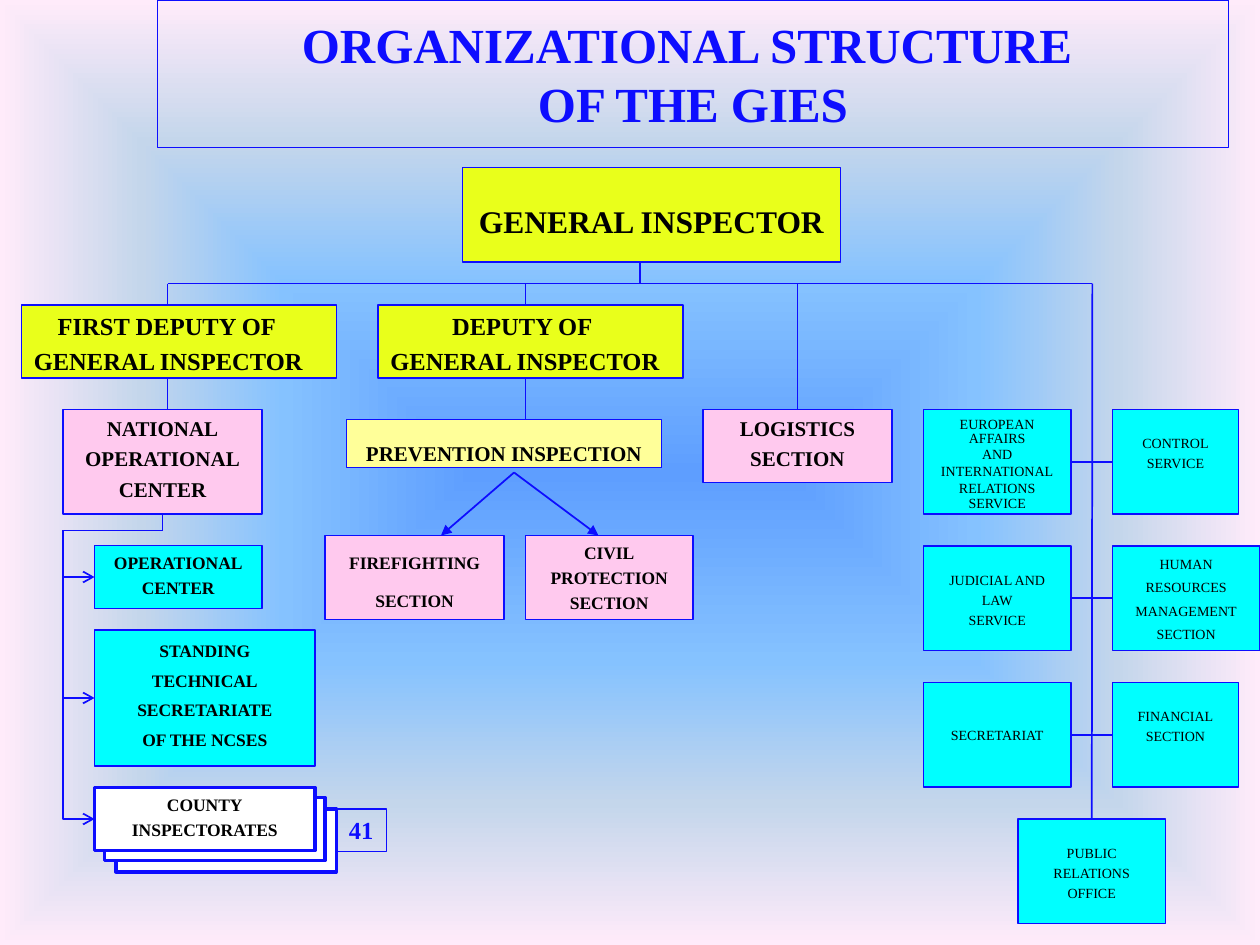
from itertools import cycle

from lxml.etree import SubElement
from pptx import Presentation
from pptx.dml.color import RGBColor
from pptx.enum.shapes import MSO_CONNECTOR, MSO_SHAPE
from pptx.enum.text import MSO_ANCHOR, PP_ALIGN
from pptx.oxml import parse_xml
from pptx.oxml.ns import nsdecls, qn
from pptx.util import Inches, Pt

FONT = "Times New Roman"
BLUE, BLACK, WHITE = "0D0DFF", "000000", "FFFFFF"
LIME, PINK, CYAN, CREAM = "E9FF1B", "FFC9EE", "00FFFF", "FFFF99"
BACKGROUND_STOPS = [(0, "5E9EFF"), (40, "85C2FF"), (70, "C4D6EB"), (100, "FFEBFA")]
BLANK_LINE = 0.15  # height of one small line, used to lower text in a box


def rgb(color):
    return RGBColor.from_string(color)


def paint_background(page):
    stops = "".join(
        f'<a:gs pos="{percent * 1000}"><a:srgbClr val="{color}"/></a:gs>'
        for percent, color in BACKGROUND_STOPS)
    page.element.cSld.insert(0, parse_xml(
        f'<p:bg {nsdecls("p", "a")}><p:bgPr><a:gradFill><a:gsLst>{stops}</a:gsLst>'
        '<a:path path="shape"><a:fillToRect l="50000" t="50000" r="50000" b="50000"/>'
        '</a:path></a:gradFill><a:effectLst/></p:bgPr></p:bg>'))


def outline(shape, width):
    shape.line.color.rgb = rgb(BLUE)
    shape.line.width = Pt(width)


def style_font(font, size, color, bold):
    font.name = FONT
    font.size = Pt(size)
    font.bold = bold
    font.color.rgb = rgb(color)


def add_title(page, text):
    title = page.shapes.title
    title.left, title.top, title.width, title.height = map(Inches, (1.25, 0, 8.5, 1.17))
    outline(title, 0.75)
    frame = title.text_frame
    frame.text = text
    frame.word_wrap = True
    frame.vertical_anchor = MSO_ANCHOR.MIDDLE
    paragraph = frame.paragraphs[0]
    paragraph.alignment = PP_ALIGN.CENTER
    for span in paragraph.runs:
        style_font(span.font, 28, BLUE, True)


def add_box(page, at, fill, lines=(), size=10, bold=True, color=BLACK, width=0.75,
            spacing=(1,), drop=0, align=PP_ALIGN.CENTER, first_indent=0):
    """Add a bordered box; spacing holds one factor per line and is repeated as needed."""
    box = page.shapes.add_shape(MSO_SHAPE.RECTANGLE, *map(Inches, at))
    box.shadow.inherit = False
    outline(box, width)
    if fill:
        box.fill.solid()
        box.fill.fore_color.rgb = rgb(fill)
    else:
        box.fill.background()
    if not lines:
        return box

    frame = box.text_frame
    frame.text = "\n".join(lines)
    frame.word_wrap = True
    frame.vertical_anchor = MSO_ANCHOR.TOP
    frame.margin_top = Inches(0.05 + drop)
    for index, (paragraph, factor) in enumerate(zip(frame.paragraphs, cycle(spacing))):
        paragraph.alignment = align
        paragraph.line_spacing = factor
        if index:
            paragraph.space_before = Pt(0.24 * size)
        elif first_indent:
            paragraph._p.get_or_add_pPr().set("indent", str(Inches(first_indent)))
        for span in paragraph.runs:
            style_font(span.font, size, color, bold)
    return box


def finish_line(line, arrow):
    outline(line, 1)
    if arrow:
        SubElement(line.get_or_add_ln(), qn("a:tailEnd"), type=arrow)
    SubElement(line._element.spPr, qn("a:effectLst"))


def add_line(page, start, end, arrow=None, begin=None, finish=None):
    """Add a straight line; begin and finish are (box, side) pairs to join."""
    line = page.shapes.add_connector(
        MSO_CONNECTOR.STRAIGHT, *map(Inches, (*start, *end)))
    if begin:
        line.begin_connect(*begin)
    if finish:
        line.end_connect(*finish)
    finish_line(line, arrow)


def add_elbow(page, start, end, turn_y, rail_x):
    """Run down to turn_y, left to rail_x, down again, and right into end."""
    (x1, y1), (x2, y2) = start, end
    across, down = x1 - x2, y2 - y1
    left = (x1 + x2 - down) / 2
    top = (y1 + y2 - across) / 2
    line = page.shapes.add_connector(
        MSO_CONNECTOR.ELBOW, *map(Inches, (left, top, left + down, top + across)))
    properties = line._element.spPr
    properties.find(qn("a:xfrm")).set("rot", "5400000")
    geometry = properties.find(qn("a:prstGeom"))
    geometry.set("prst", "bentConnector4")
    guides = geometry.find(qn("a:avLst"))
    if guides is None:
        guides = SubElement(geometry, qn("a:avLst"))
    ratios = ((turn_y - y1) / down, (x1 - rail_x) / across)
    for number, ratio in enumerate(ratios, 1):
        SubElement(guides, qn("a:gd"), name=f"adj{number}",
                   fmla=f"val {round(ratio * 100000)}")
    finish_line(line, "arrow")


def add_leaders(page):
    add_box(page, (3.67, 1.33, 3, 0.75), LIME, ["GENERAL INSPECTOR"], 18, drop=0.22)
    add_box(page, (3, 2.42, 2.42, 0.58), LIME, ["DEPUTY OF", "GENERAL INSPECTOR"], 14,
            align=PP_ALIGN.LEFT, first_indent=0.49)
    add_box(page, (0.17, 2.42, 2.5, 0.58), LIME,
            ["FIRST DEPUTY OF", "GENERAL INSPECTOR"], 14,
            align=PP_ALIGN.LEFT, first_indent=0.19)
    add_line(page, (1.33, 2.25), (8.67, 2.25))
    add_line(page, (5.08, 2.08), (5.08, 2.25))
    for x, next_level in ((1.33, 3.25), (4.17, 3.33)):
        add_line(page, (x, 2.25), (x, 2.42))
        add_line(page, (x, 3), (x, next_level))


def add_operations(page):
    for offset in (0.17, 0.08):
        add_box(page, (0.75 + offset, 6.25 + offset, 1.75, 0.5), WHITE, width=2)
    add_box(page, (0.75, 6.25, 1.75, 0.5), WHITE, ["COUNTY", "INSPECTORATES"], width=2)
    add_box(page, (2.67, 6.42, 0.4, 0.34), None, ["41"], 14, color=BLUE,
            align=PP_ALIGN.LEFT)
    add_box(page, (0.5, 3.25, 1.58, 0.83), PINK, ["NATIONAL", "OPERATIONAL", "CENTER"], 12)
    add_box(page, (0.75, 4.33, 1.33, 0.5), CYAN, ["OPERATIONAL", "CENTER"])
    add_box(page, (0.75, 5, 1.75, 1.08), CYAN,
            ["STANDING", "TECHNICAL", "SECRETARIATE", "OF THE NCSES"], spacing=(1.2,))
    for y in (4.58, 5.54, 6.5):
        add_elbow(page, (1.29, 4.08), (0.75, y), turn_y=4.21, rail_x=0.5)


def add_prevention_and_logistics(page):
    add_box(page, (2.75, 3.33, 2.5, 0.38), CREAM, ["PREVENTION INSPECTION"], 12,
            width=1, spacing=(1.6,))
    add_box(page, (2.58, 4.25, 1.42, 0.67), PINK, ["FIREFIGHTING", "SECTION"],
            spacing=(1.5, 1.6))
    add_box(page, (4.17, 4.25, 1.33, 0.67), PINK, ["CIVIL", "PROTECTION", "SECTION"])
    for x in (3.5, 4.75):
        add_line(page, (4.08, 3.75), (x, 4.25), arrow="triangle")
    logistics = add_box(page, (5.58, 3.25, 1.5, 0.58), PINK, ["LOGISTICS", "SECTION"], 12)
    add_line(page, (6.33, 2.25), (6.33, 3.25), finish=(logistics, 0))


def add_services(page):
    # Each row: left lines, drop, spacing; right lines, drop, spacing, width
    rows = [
        (["EUROPEAN", "AFFAIRS", "AND", "INTERNATIONAL", "RELATIONS", "SERVICE"], 0,
         (1, 0.6, 0.8, 0.8, 0.8, 0.7),
         ["CONTROL", "SERVICE"], BLANK_LINE, (1,), 1),
        (["JUDICIAL AND", "LAW", "SERVICE"], BLANK_LINE, (1,),
         ["HUMAN", "RESOURCES", "MANAGEMENT", "SECTION"], 0, (1.2,), 1.17),
        (["SECRETARIAT"], 2 * BLANK_LINE, (1,),
         ["FINANCIAL", "SECTION"], BLANK_LINE, (1,), 1),
    ]
    for index, row in enumerate(rows):
        left_lines, left_drop, left_spacing, lines, drop, spacing, width = row
        top = 3.25 + index * 13 / 12
        left = add_box(page, (7.33, top, 1.17, 0.83), CYAN, left_lines, 8, False,
                       drop=left_drop, spacing=left_spacing)
        right = add_box(page, (8.83, top, width, 0.83), CYAN, lines, 8, False,
                        drop=drop, spacing=spacing)
        add_line(page, (8.5, top), (8.83, top), begin=(left, 3), finish=(right, 1))
    public_relations = add_box(page, (8.08, 6.5, 1.17, 0.83), CYAN,
                               ["PUBLIC", "RELATIONS", "OFFICE"], 8, False,
                               drop=BLANK_LINE)
    add_line(page, (8.67, 2.25), (8.67, 6.5), finish=(public_relations, 0))


def main():
    deck = Presentation()
    deck.slide_width, deck.slide_height = Inches(10), Inches(7.5)
    page = deck.slides.add_slide(deck.slide_layouts[5])
    paint_background(page)
    add_title(page, "ORGANIZATIONAL STRUCTURE \vOF THE GIES")
    add_leaders(page)
    add_operations(page)
    add_prevention_and_logistics(page)
    add_services(page)
    deck.save("out.pptx")


if __name__ == "__main__":
    main()
